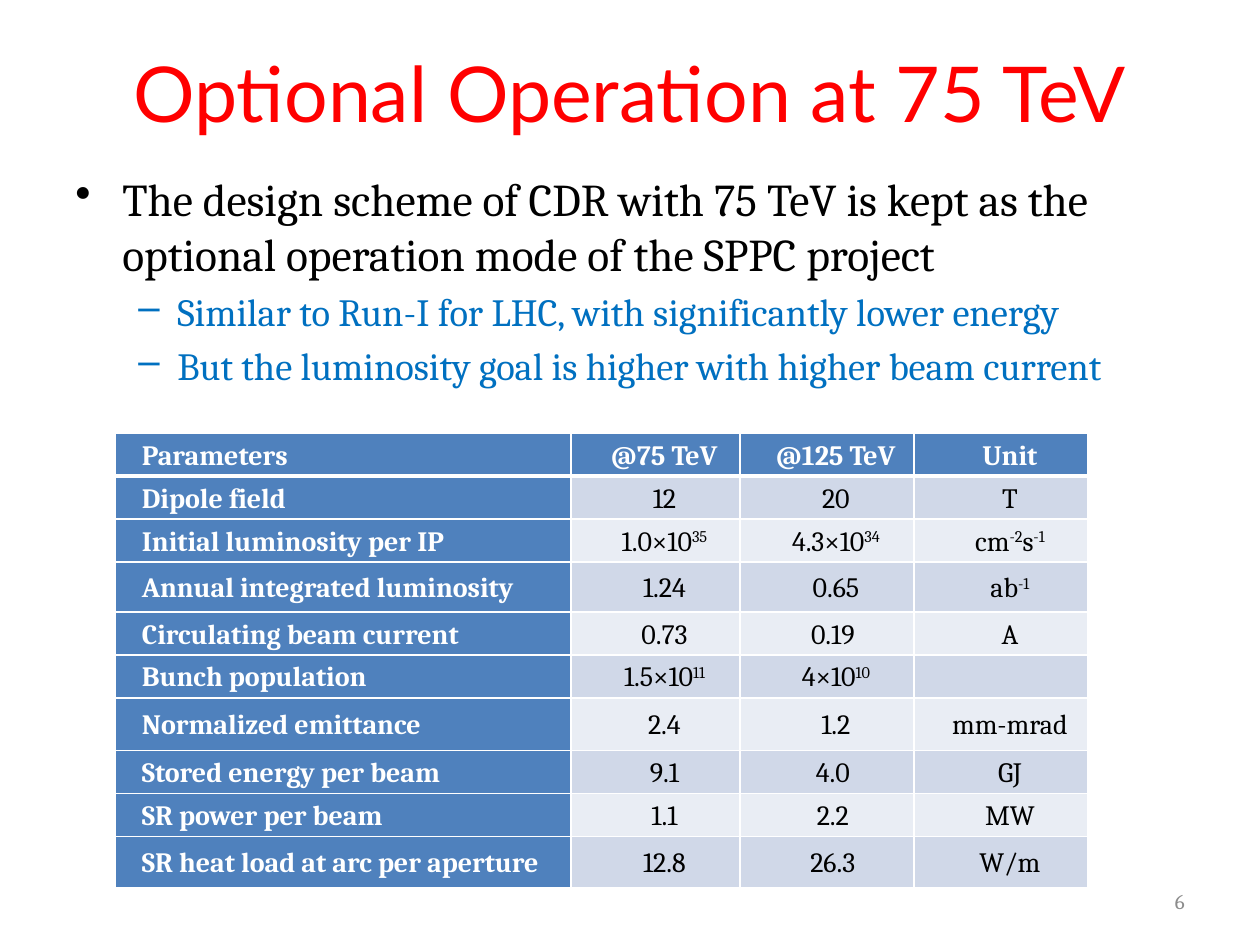
"""Build the slide on optional operation at 75 TeV."""
import pptx
import pptx.dml.color
import pptx.enum.text
import pptx.oxml
import pptx.oxml.ns
import pptx.util

RGBColor = pptx.dml.color.RGBColor
ALIGN = pptx.enum.text.PP_ALIGN
ANCHOR = pptx.enum.text.MSO_ANCHOR
Pt = pptx.util.Pt

WHITE = RGBColor(0xFF, 0xFF, 0xFF)
BLACK = RGBColor(0x00, 0x00, 0x00)
RED = RGBColor(0xFF, 0x00, 0x00)
BLUE = RGBColor(0x00, 0x70, 0xC0)
GRAY = RGBColor(0x8C, 0x8C, 0x8C)
HEADER = RGBColor(0x4F, 0x81, 0xBD)
BANDS = [RGBColor(0xE9, 0xED, 0xF4), RGBColor(0xD0, 0xD8, 0xE8)]

SCALE = 914400 // 126
PAGE_SIZE = (1260, 945)
SERIF, SANS = "Cambria", "Lato"

TITLE = "Optional Operation at 75 TeV"
PAGE_NUMBER = "6"
TITLE_PLACE = (63, 38, 1134, 107)
BODY_PLACE = (63, 165, 1134, 248)
NUMBER_PLACE = (903, 876, 294, 50)
TABLE_PLACE = (115, 433)

BULLETS = [
    (0, "The design scheme of CDR with 75 TeV is kept as the optional operation mode of the SPPC project"),
    (1, "Similar to Run-I for LHC, with significantly lower energy"),
    (1, "But the luminosity goal is higher with higher beam current"),
]
LEVELS = [
    {"mark": "•", "margin": 47, "hang": 47, "size": 26, "color": BLACK},
    {"mark": "–", "margin": 102, "hang": 39, "size": 22, "color": BLUE},
]

COLUMNS = [456, 169, 174, 174]
ROWS = [
    (43, ["Parameters", "@75 TeV", "@125 TeV", "Unit"]),
    (43, ["Dipole field", "12", "20", "T"]),
    (43, ["Initial luminosity per IP", "1.0×10^35", "4.3×10^34", "cm^-2^s^-1"]),
    (50, ["Annual integrated luminosity", "1.24", "0.65", "ab^-1"]),
    (43, ["Circulating beam current ", "0.73", "0.19 ", "A"]),
    (43, ["Bunch population", "1.5×10^11", "4×10^10", ""]),
    (53, ["Normalized emittance", "2.4", "1.2", "mm-mrad"]),
    (43, ["Stored energy per beam", "9.1", "4.0 ", "GJ"]),
    (43, ["SR power per beam", "1.1", "2.2 ", "MW"]),
    (51, ["SR heat load at arc per aperture", "12.8", "26.3 ", "W/m"]),
]


def px(length):
    return pptx.util.Emu(length * SCALE)


def style(span, font, size, color, bold=False):
    span.font.name = font
    span.font.size = Pt(size)
    span.font.color.rgb = color
    span.font.bold = bold


def add_text(page, place, anchor):
    box = page.shapes.add_textbox(*map(px, place))
    box.text_frame.word_wrap = True
    box.text_frame.vertical_anchor = anchor
    return box.text_frame


def add_line(page, place, text, align, font, size, color):
    frame = add_text(page, place, ANCHOR.MIDDLE)
    frame.text = text
    para = frame.paragraphs[0]
    para.alignment = align
    style(para.runs[0], font, size, color)


def set_indent(para, margin, first):
    properties = para._p.get_or_add_pPr()
    properties.set("marL", str(px(margin)))
    properties.set("indent", str(px(first)))
    return properties


def add_bullets(page):
    frame = add_text(page, BODY_PLACE, ANCHOR.TOP)
    frame.text = "\n".join(text for _, text in BULLETS)
    for index, (para, (depth, _)) in enumerate(zip(frame.paragraphs, BULLETS)):
        level = LEVELS[depth]
        para.level = depth
        properties = set_indent(para, level["margin"], -level["hang"])
        if index:
            para.space_before = Pt(round(level["size"] * 0.2, 1))
        mark = pptx.oxml.parse_xml(
            f'<a:buChar {pptx.oxml.ns.nsdecls("a")} char="{level["mark"]}"/>')
        properties.append(mark)
        style(para.runs[0], SERIF, level["size"], level["color"])


def add_borders(cell, bottom):
    properties = cell._tc.get_or_add_tcPr()
    widths = {"lnL": 1, "lnR": 1, "lnT": 1, "lnB": bottom}
    for index, (side, width) in enumerate(widths.items()):
        line = pptx.oxml.parse_xml(
            f'<a:{side} {pptx.oxml.ns.nsdecls("a")} w="{Pt(width)}">'
            f'<a:solidFill><a:srgbClr val="{WHITE}"/></a:solidFill></a:{side}>')
        properties.insert(index, line)


def fill_cell(cell, text, row, column):
    heading = row == 0 or column == 0
    cell.fill.solid()
    cell.fill.fore_color.rgb = HEADER if heading else BANDS[row % 2]
    cell.vertical_anchor = ANCHOR.MIDDLE
    cell.margin_left = cell.margin_right = px(9)
    cell.margin_top = cell.margin_bottom = 0
    add_borders(cell, 1 if row else 3)
    if not text:
        return
    para = cell.text_frame.paragraphs[0]
    para.alignment = ALIGN.CENTER if column else ALIGN.JUSTIFY
    para.line_spacing = 1.1
    set_indent(para, 0, 18)
    for index, part in enumerate(text.split("^")):
        span = para.add_run()
        span.text = part
        style(span, SERIF, 16, WHITE if heading else BLACK, heading)
        if index % 2:
            span._r.get_or_add_rPr().set("baseline", "30000")


def add_parameters(page):
    size = (sum(COLUMNS), sum(height for height, _ in ROWS))
    table = page.shapes.add_table(
        len(ROWS), len(COLUMNS), *map(px, TABLE_PLACE + size)).table
    for column, width in zip(table.columns, COLUMNS):
        column.width = px(width)
    for row, (height, texts) in enumerate(ROWS):
        table.rows[row].height = px(height)
        for column, text in enumerate(texts):
            fill_cell(table.cell(row, column), text, row, column)


def main():
    deck = pptx.Presentation()
    deck.slide_width, deck.slide_height = map(px, PAGE_SIZE)
    page = deck.slides.add_slide(deck.slide_layouts[6])
    add_line(page, TITLE_PLACE, TITLE, ALIGN.CENTER, SANS, 44, RED)
    add_bullets(page)
    add_line(page, NUMBER_PLACE, PAGE_NUMBER, ALIGN.RIGHT, SERIF, 12, GRAY)
    add_parameters(page)
    deck.save("out.pptx")


if __name__ == "__main__":
    main()
